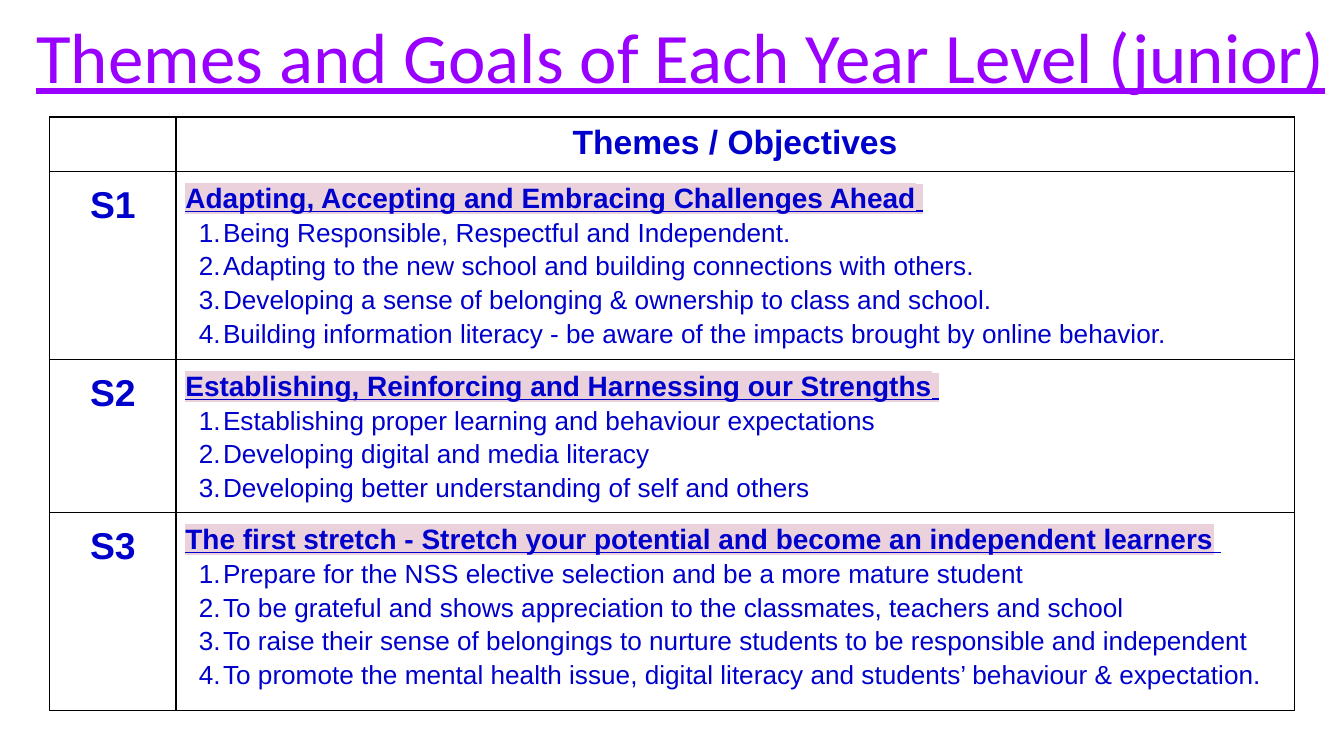
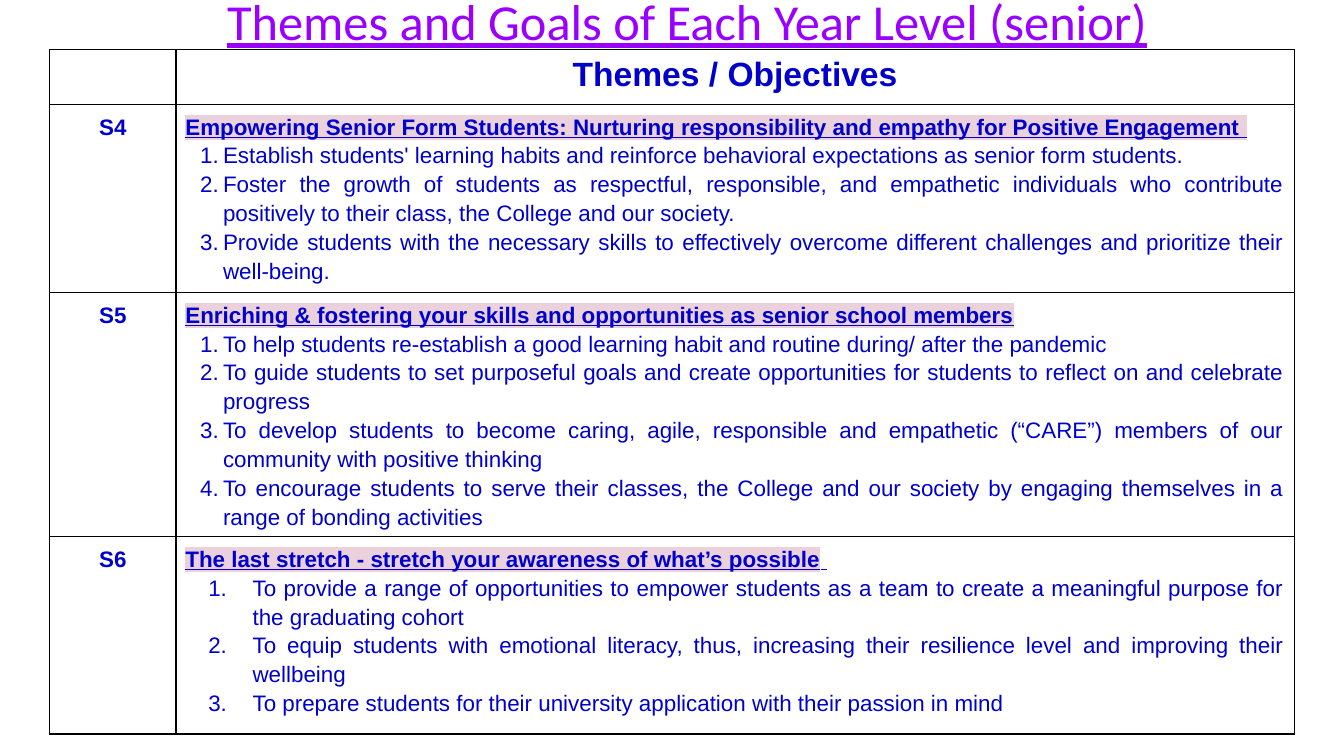
from lxml import etree
from pptx import Presentation
from pptx.dml.color import RGBColor
from pptx.enum.text import MSO_ANCHOR, MSO_AUTO_SIZE, PP_ALIGN as AL
from pptx.oxml.ns import qn
from pptx.util import Inches, Pt

COLORS = {"title": "9900FF", "text": "0000CC", "mark": "EAD1DC", "border": "000000"}
COL_WIDTHS = (0.94, 8.32)
ROW_HEIGHTS = (0.39, 1.4, 1.14, 1.47)
LINE_SPACING = 1.15

# Each year: label, theme, text after the theme, whether that text is marked, goals
JUNIOR = [
    ("S1", "Adapting, Accepting and Embracing Challenges Ahead", " ", True, [
        "Being Responsible, Respectful and Independent. ",
        "Adapting to the new school and building connections with others. ",
        "Developing a sense of belonging & ownership to class and school. ",
        "Building information literacy - be aware of the impacts brought by online behavior. ",
    ]),
    ("S2", "Establishing, Reinforcing and Harnessing our Strengths", " ", True, [
        "Establishing proper learning and behaviour expectations",
        "Developing digital and media literacy",
        "Developing better understanding of self and others",
    ]),
    ("S3", "The first stretch - Stretch your potential and become an independent learners",
     " ", False, [
         "Prepare for the NSS elective selection and be a more mature student",
         "To be grateful and shows appreciation to the classmates, teachers and school",
         "To raise their sense of belongings to nurture students to be responsible and "
         "independent",
         "To promote the mental health issue, digital literacy and students’ behaviour & "
         "expectation. ",
     ]),
]
SENIOR = [
    ("S4", "Empowering Senior Form Students: Nurturing responsibility and empathy for "
     "Positive Engagement ", "", True, [
         "Establish students' learning habits and reinforce behavioral expectations as "
         "senior form students. ",
         "Foster the growth of students as respectful, responsible, and empathetic "
         "individuals who contribute positively to their class, the College and our society. ",
         "Provide students with the necessary skills to effectively overcome different "
         "challenges and prioritize their well-being. ",
     ]),
    ("S5", "Enriching & fostering your skills and opportunities as senior school members",
     "", True, [
         "To help students re-establish a good learning habit and routine during/ after "
         "the pandemic",
         "To guide students to set purposeful goals and create opportunities for students "
         "to reflect on and celebrate progress",
         "To develop students to become caring, agile, responsible and empathetic (“CARE”) "
         "members of our community with positive thinking",
         "To encourage students to serve their classes, the College and our society by "
         "engaging themselves in a range of bonding activities",
     ]),
    ("S6", "The last stretch - stretch your awareness of what’s possible", " ", False, [
        "To provide a range of opportunities to empower students as a team to create a "
        "meaningful purpose for the graduating cohort ",
        "To equip students with emotional literacy, thus, increasing their resilience level "
        "and improving their wellbeing",
        "To prepare students for their university application with their passion in mind ",
    ]),
]


def add_text(p, text, size, font="Arial", color="text", bold=False, underline=False,
             mark=False, align=None, spacing=None):
    """Append a formatted run to paragraph p."""
    if align is not None:
        p.alignment = align
    if spacing:
        p.line_spacing = spacing
    r = p.add_run()
    r.text = text
    f = r.font
    f.size, f.name, f.bold, f.underline = Pt(size), font, bold, underline
    f.color.rgb = RGBColor.from_string(COLORS[color])
    if mark:
        highlight = etree.Element(qn("a:highlight"))
        etree.SubElement(highlight, qn("a:srgbClr"), val=COLORS["mark"])
        r._r.rPr.find(qn("a:solidFill")).addnext(highlight)


def number(p, left, indent):
    """Turn p into an item of a numbered list, lengths in inches."""
    pPr = p._p.get_or_add_pPr()
    pPr.set("marL", str(Inches(left)))
    pPr.set("indent", str(Inches(indent)))
    color = etree.SubElement(pPr, qn("a:buClr"))
    etree.SubElement(color, qn("a:srgbClr"), val=COLORS["text"])
    etree.SubElement(pPr, qn("a:buFont"), typeface="Arial")
    etree.SubElement(pPr, qn("a:buAutoNum"), type="arabicPeriod")


def format_cell(cell, margin_x=0.07, margin_y=0.05):
    cell.margin_left = cell.margin_right = Inches(margin_x)
    cell.margin_top = cell.margin_bottom = Inches(margin_y)
    cell.fill.background()
    tcPr = cell._tc.get_or_add_tcPr()
    for i, side in enumerate(("a:lnL", "a:lnR", "a:lnT", "a:lnB")):
        ln = etree.Element(qn(side), w=str(Pt(0.75)))
        fill = etree.SubElement(ln, qn("a:solidFill"))
        etree.SubElement(fill, qn("a:srgbClr"), val=COLORS["border"])
        tcPr.insert(i, ln)


def add_title(slide, text, box, size):
    title = slide.shapes.title
    title.left, title.top, title.width, title.height = map(Inches, box)
    tf = title.text_frame
    tf.word_wrap = True
    tf.auto_size = MSO_AUTO_SIZE.NONE
    tf.vertical_anchor = MSO_ANCHOR.BOTTOM
    tf.margin_left = tf.margin_right = tf.margin_bottom = 0
    tf.margin_top = Inches(0.05)
    add_text(tf.paragraphs[0], text, size, font="Calibri", color="title",
             underline=True, align=AL.LEFT)


def fill_goals(tf, theme, tail, tail_marked, goals, theme_size, size, indent):
    p = tf.paragraphs[0]
    add_text(p, theme, theme_size, bold=True, underline=True, mark=True,
             align=AL.JUSTIFY, spacing=LINE_SPACING)
    if tail:
        add_text(p, tail, size, bold=True, underline=True, mark=tail_marked)
    for goal in goals:
        p = tf.add_paragraph()
        add_text(p, goal, size, align=AL.JUSTIFY, spacing=LINE_SPACING)
        number(p, *indent)


def add_goal_table(slide, years, left, top, label_size, theme_size, size, indents):
    frame = slide.shapes.add_table(
        len(ROW_HEIGHTS), len(COL_WIDTHS), Inches(left), Inches(top),
        Inches(sum(COL_WIDTHS)), Inches(sum(ROW_HEIGHTS)))
    table = frame.table
    table.first_row = table.horz_banding = False
    for col, width in zip(table.columns, COL_WIDTHS):
        col.width = Inches(width)
    for row, height in zip(table.rows, ROW_HEIGHTS):
        row.height = Inches(height)
    for cell in table.iter_cells():
        format_cell(cell)
    add_text(table.cell(0, 1).text_frame.paragraphs[0], "Themes / Objectives", 18,
             bold=True, align=AL.CENTER)
    for i, ((label, *content), indent) in enumerate(zip(years, indents), 1):
        add_text(table.cell(i, 0).text_frame.paragraphs[0], label, label_size,
                 bold=True, align=AL.CENTER, spacing=LINE_SPACING)
        fill_goals(table.cell(i, 1).text_frame, *content, theme_size, size, indent)


def add_level_slide(prs, title, title_box, title_size, years, table_top, **table_format):
    slide = prs.slides.add_slide(prs.slide_layouts[5])
    add_title(slide, title, title_box, title_size)
    add_goal_table(slide, years, 0.37, table_top, **table_format)


def main():
    prs = Presentation()
    prs.slide_width = Inches(10)
    prs.slide_height = prs.slide_width * 9 // 16
    add_level_slide(prs, "Themes and Goals of Each Year Level (junior)",
                    (0.27, 0.11, 9.67, 0.62), 38, JUNIOR, 0.87,
                    label_size=20, theme_size=15, size=14, indents=[(0.28, -0.18)] * 3)
    add_level_slide(prs, "Themes and Goals of Each Year Level (senior)",
                    (1.69, -0.14, 7.92, 0.52), 27, SENIOR, 0.37,
                    label_size=12, theme_size=12, size=12,
                    indents=[(0.28, -0.17)] * 2 + [(0.5, -0.33)])
    prs.save("out.pptx")


if __name__ == "__main__":
    main()
